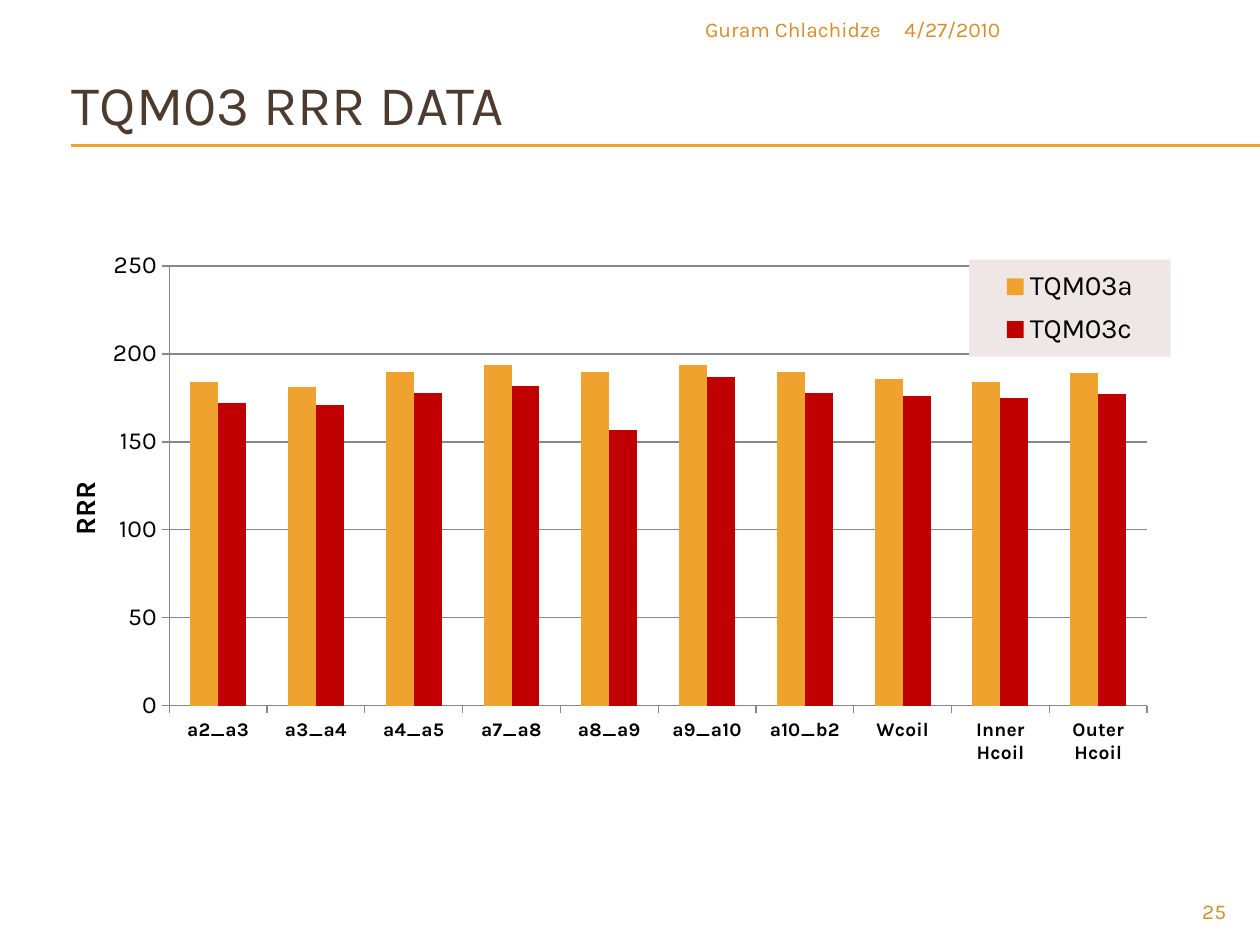
from lxml import etree
from pptx import Presentation
from pptx import util as u
from pptx.chart.data import CategoryChartData
from pptx.dml.color import RGBColor
from pptx.enum import chart as ch, shapes, text
from pptx.oxml.ns import qn

COLORS = {"brown": "4E3B30", "amber": "F0A22E", "gold": "D48F29", "red": "C00000",
          "black": "000000", "gray": "878787", "blush": "EFE7E6"}
C = {name: RGBColor.from_string(value) for name, value in COLORS.items()}
FONT = "Karla"

prs = Presentation()
prs.slide_width, prs.slide_height = u.Inches(10), u.Inches(7.5)
W, H = prs.slide_width, prs.slide_height
s = prs.slides.add_slide(prs.slide_layouts[6])


def style(font, size, color="black", bold=False):
    for name, value in {"name": FONT, "size": u.Pt(size), "bold": bold}.items():
        setattr(font, name, value)
    font.color.rgb = C[color]


def place(parent, index, x, y, w, h, inner=False):
    """Give a chart part a fixed place, as shares of the chart's size."""
    for old in parent.findall(qn("c:layout")):
        parent.remove(old)
    layout = etree.Element(qn("c:layout"))
    manual = etree.SubElement(layout, qn("c:manualLayout"))
    values = {"layoutTarget": "inner"} if inner else {}
    values |= {"xMode": "edge", "yMode": "edge", "x": x, "y": y, "w": w, "h": h}
    for tag, value in values.items():
        etree.SubElement(manual, qn(f"c:{tag}")).set("val", str(value))
    parent.insert(index, layout)


# Double rule under the title
for y in (1.15, 1.16):
    rule = s.shapes.add_connector(shapes.MSO_CONNECTOR.STRAIGHT,
                                  int(W * 0.056), int(H * y / 7.5), W, int(H * y / 7.5))
    rule.line.color.rgb = C["amber"]
    rule.line.width = u.Pt(0.75)
    etree.SubElement(rule._element.spPr, qn("a:effectLst"))

# Title, header and slide number: left, top, width, height in inches of a 10 x 7.5 grid
LEFT, RIGHT = text.PP_ALIGN.LEFT, text.PP_ALIGN.RIGHT
TOP, MIDDLE = text.MSO_ANCHOR.TOP, text.MSO_ANCHOR.MIDDLE
for words, (x, y, w, h), size, color, align, anchor in (
    ("TQM03 RRR DATA", (0.47, 0.44, 9, 0.75), 32, "brown", LEFT, MIDDLE),
    ("4/27/2010", (7.08, 0.08, 2.75, 0.32), 12, "gold", LEFT, TOP),
    ("Guram Chlachidze", (3.92, 0.08, 3.17, 0.32), 12, "gold", RIGHT, TOP),
    ("25", (9, 7.08, 0.83, 0.27), 12, "gold", RIGHT, TOP),
):
    sp = s.shapes.add_textbox(int(W * x / 10), int(H * y / 7.5),
                              int(W * w / 10), int(H * h / 7.5))
    tf = sp.text_frame
    tf.word_wrap, tf.vertical_anchor = True, anchor
    p = tf.paragraphs[0]
    p.alignment = align
    r = p.add_run()
    r.text = words
    style(r.font, size, color)

# Chart data
data = CategoryChartData(number_format="0")
data.categories = ["a2_a3", "a3_a4", "a4_a5", "a7_a8", "a8_a9", "a9_a10", "a10_b2",
                   "Wcoil", "Inner Hcoil", "Outer Hcoil"]
data.add_series("TQM03a", (184, 181, 190, 194, 190, 194, 190, 186, 184, 189))
data.add_series("TQM03c", (172, 171, 178, 182, 157, 187, 178, 176, 175, 177))
chart = s.shapes.add_chart(ch.XL_CHART_TYPE.COLUMN_CLUSTERED, int(W * 0.049),
                           int(H * 1.89 / 7.5), int(W * 0.889), int(H * 4.27 / 7.5),
                           data).chart
chart.has_title = False
style(chart.font, 10)

# Columns
plot = chart.plots[0]
plot.gap_width, plot.overlap, plot.vary_by_categories = 150, 0, False
for series, color in zip(plot.series, ("amber", "red")):
    series.format.fill.solid()
    series.format.fill.fore_color.rgb = C[color]

# Axes
cat, val = chart.category_axis, chart.value_axis
for axis, size, bold in ((cat, 11, True), (val, 14, False)):
    style(axis.tick_labels.font, size, bold=bold)
    axis.major_tick_mark = ch.XL_TICK_MARK.OUTSIDE
    axis.minor_tick_mark = ch.XL_TICK_MARK.NONE
    axis.format.line.color.rgb = C["gray"]
for name, value in {"minimum_scale": 0, "maximum_scale": 250, "major_unit": 50,
                    "has_major_gridlines": True, "has_title": True}.items():
    setattr(val, name, value)
val.major_gridlines.format.line.color.rgb = C["gray"]
val.tick_labels.number_format = "0"
val.tick_labels.number_format_is_linked = False
r = val.axis_title.text_frame.paragraphs[0].add_run()
r.text = "RRR"
style(r.font, 16, bold=True)

# Legend over the top right corner of the plot
chart.has_legend = True
legend = chart.legend
legend.position = ch.XL_LEGEND_POSITION.RIGHT
legend.include_in_layout = False
style(legend.font, 16)
sp_pr = etree.Element(qn("c:spPr"))
fill = etree.SubElement(sp_pr, qn("a:solidFill"))
etree.SubElement(fill, qn("a:srgbClr")).set("val", COLORS["blush"])
legend._element.find(qn("c:overlay")).addnext(sp_pr)
place(legend._element, 1, 0.81, 0.04, 0.18, 0.18)
place(chart._chartSpace.chart.plotArea, 0, 0.096, 0.052, 0.873, 0.817, inner=True)

prs.save("out.pptx")
